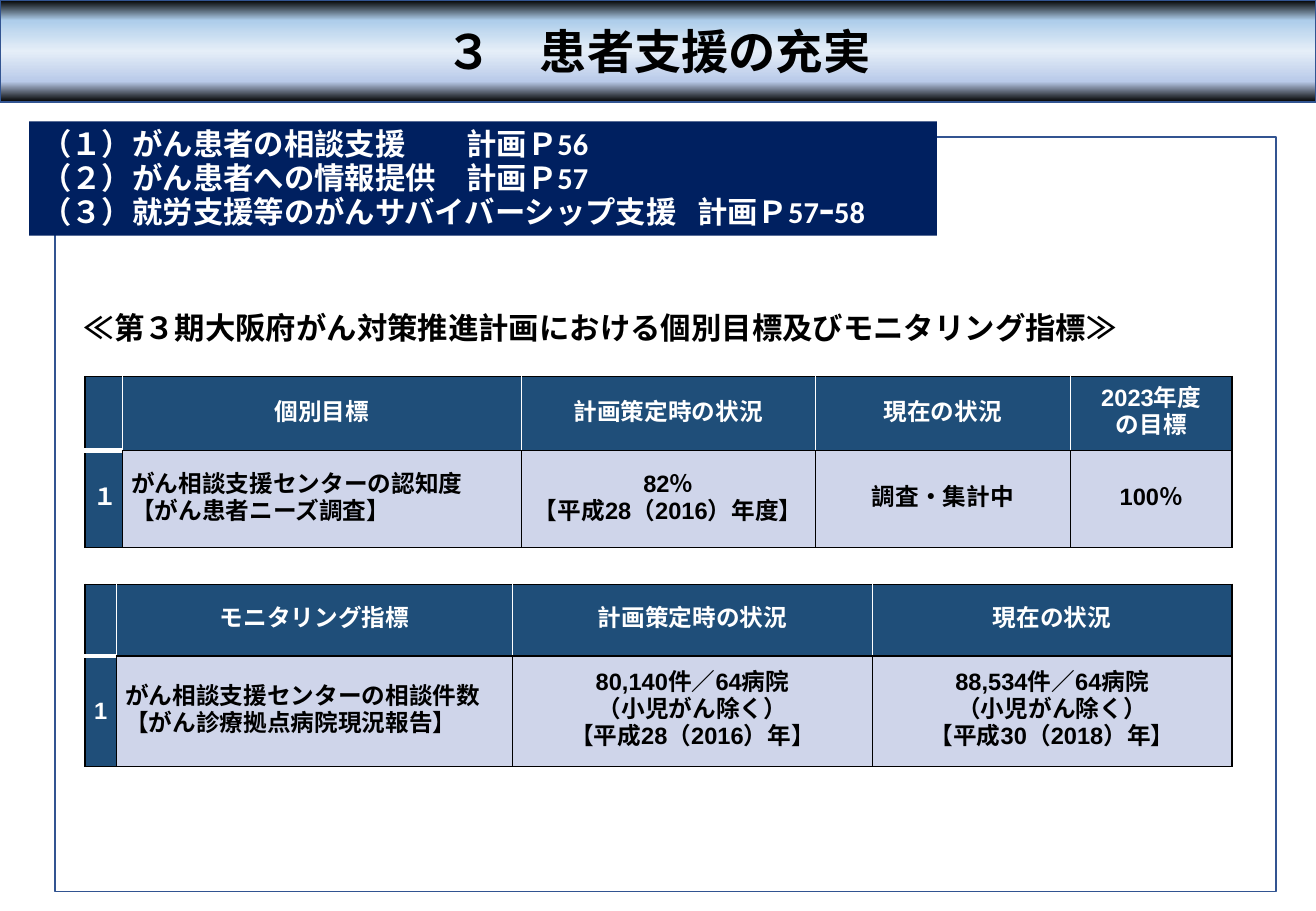
"""Build the patient support slide with its two indicator tables."""
from dataclasses import dataclass
from typing import Optional

from lxml.etree import SubElement
from pptx import Presentation
from pptx.dml.color import RGBColor
from pptx.enum.shapes import MSO_SHAPE as Shape
from pptx.enum.text import MSO_ANCHOR as Anchor, MSO_AUTO_SIZE as AutoSize, PP_ALIGN as Align
from pptx.oxml.ns import qn
from pptx.util import Inches, Pt

WIDTH, HEIGHT = Inches(10.83), Inches(7.5)
BLACK = RGBColor(0x00, 0x00, 0x00)
WHITE = RGBColor(0xFF, 0xFF, 0xFF)
OUTLINE = RGBColor(0x32, 0x54, 0x91)
NAVY = RGBColor(0x00, 0x20, 0x60)
HEADER = RGBColor(0x1F, 0x4E, 0x79)
BODY = RGBColor(0xCF, 0xD5, 0xEA)
TITLE_STOPS = {0: BLACK, 20: RGBColor(0xAD, 0xCD, 0xEA), 50: RGBColor(0xE5, 0xEE, 0xF8),
               80: RGBColor(0xB9, 0xCA, 0xE9), 100: BLACK}
JAPANESE = "Noto Sans CJK JP"
BANNER_TABS = (32.3, 49.84)
TABLE_LEFT = 6.46


@dataclass(frozen=True)
class Area:
    """A rectangle in percent of the slide's width and height."""
    left: float
    top: float
    width: float
    height: float

    def lengths(self) -> tuple:
        """Return the rectangle as slide lengths."""
        return across(self.left), down(self.top), across(self.width), down(self.height)


@dataclass(frozen=True)
class Style:
    """The format of a block of text."""
    size: float
    font: str
    color: RGBColor
    align: Align = Align.LEFT
    spacing: Optional[float] = None
    tabs: tuple = ()


@dataclass(frozen=True)
class Grid:
    """A table with its column and row shares and cell texts."""
    top: float
    columns: tuple
    rows: tuple
    texts: tuple


GRIDS = (
    Grid(41.33, (2.86, 30.29, 22.35, 19.39, 12.28), (8.13, 10.67), (
        ("", "個別目標", "計画策定時の状況", "現在の状況", "2023年度\nの目標"),
        ("１", "がん相談支援センターの認知度\n【がん患者ニーズ調査】",
         "82％\n【平成28（2016）年度】", "調査・集計中", "100％"))),
    Grid(64.13, (2.4, 30.1, 27.33, 27.33), (7.87, 12.13), (
        ("", "モニタリング指標", "計画策定時の状況", "現在の状況"),
        ("1", "がん相談支援センターの相談件数\n【がん診療拠点病院現況報告】",
         "80,140件／64病院\n（小児がん除く）\n【平成28（2016）年】",
         "88,534件／64病院\n（小児がん除く）\n【平成30（2018）年】"))),
)
BANNER_TEXT = ("（１）がん患者の相談支援\t計画Ｐ56\n"
               "（２）がん患者への情報提供\t計画Ｐ57\n"
               "（３）就労支援等のがんサバイバーシップ支援\t計画Ｐ57ｰ58")
HEADING_TEXT = "≪第３期大阪府がん対策推進計画における個別目標及びモニタリング指標≫"


def across(share: float) -> int:
    """Turn a percentage of the slide width into a length."""
    return int(WIDTH * share / 100)


def down(share: float) -> int:
    """Turn a percentage of the slide height into a length."""
    return int(HEIGHT * share / 100)


def apply(target, values: dict) -> None:
    """Set every named attribute on the target."""
    for name, value in values.items():
        setattr(target, name, value)


def write(frame, text: str, style: Style) -> None:
    """Write one paragraph per line of text."""
    for index, line in enumerate(text.split("\n")):
        para = frame.add_paragraph() if index else frame.paragraphs[0]
        para.alignment = style.align
        if style.spacing:
            para.line_spacing = Pt(style.spacing)
        if style.tabs:
            stops = SubElement(para._p.get_or_add_pPr(), qn("a:tabLst"))
            for share in style.tabs:
                SubElement(stops, qn("a:tab"), pos=str(across(share)), algn="l")
        span = para.add_run()
        span.text = line
        apply(span.font, {"size": Pt(style.size), "name": style.font, "bold": True})
        span.font.color.rgb = style.color
        SubElement(span.font._element, qn("a:ea"), typeface=JAPANESE)


def add_box(page, area: Area, fill: Optional[RGBColor], line: Optional[RGBColor]):
    """Add a rectangle with an optional fill and outline."""
    box = page.shapes.add_shape(Shape.RECTANGLE, *area.lengths())
    box.shadow.inherit = False
    if fill is not None:
        box.fill.solid()
        box.fill.fore_color.rgb = fill
    if line is None:
        box.line.fill.background()
    else:
        box.line.color.rgb = line
        box.line.width = Pt(1)
    box.text_frame.vertical_anchor = Anchor.MIDDLE
    return box


def fill_gradient(box, stops: dict) -> None:
    """Fill the box from top to bottom through the given stops."""
    box.fill.gradient()
    box.fill.gradient_angle = 270
    stop_list = box._element.spPr.find(qn("a:gradFill")).find(qn("a:gsLst"))
    for stop in list(stop_list):
        stop_list.remove(stop)
    for share, color in stops.items():
        stop = SubElement(stop_list, qn("a:gs"), pos=str(share * 1000))
        SubElement(stop, qn("a:srgbClr"), val=str(color))


def add_borders(cell, borders: dict) -> None:
    """Draw the cell's edges from a mapping of side to colour and width."""
    properties = cell._tc.get_or_add_tcPr()
    for index, (side, (color, width)) in enumerate(borders.items()):
        edge = SubElement(properties, qn(f"a:ln{side}"), w=str(Pt(width)))
        SubElement(SubElement(edge, qn("a:solidFill")), qn("a:srgbClr"), val=str(color))
        properties.insert(index, edge)


def add_grid(page, grid: Grid) -> None:
    """Add a table with a dark header row and a dark first column."""
    area = Area(TABLE_LEFT, grid.top, sum(grid.columns), sum(grid.rows))
    table = page.shapes.add_table(len(grid.rows), len(grid.columns), *area.lengths()).table
    apply(table, {"first_row": False, "horz_banding": False})
    for column, share in zip(table.columns, grid.columns):
        column.width = across(share)
    for row, share in zip(table.rows, grid.rows):
        row.height = down(share)
    thin, light, thick = (BLACK, 1), (WHITE, 1), (WHITE, 3)
    last = len(grid.columns) - 1
    for y, texts in enumerate(grid.texts):
        for x, text in enumerate(texts):
            cell = table.cell(y, x)
            header, first = y == 0, x == 0
            dark = header or first
            apply(cell, {"vertical_anchor": Anchor.MIDDLE, "margin_left": Inches(0.07),
                         "margin_right": Inches(0.07), "margin_top": 0, "margin_bottom": 0})
            cell.fill.solid()
            cell.fill.fore_color.rgb = HEADER if dark else BODY
            add_borders(cell, {
                "L": light if header and not first else thin,
                "R": light if header and x < last else thin,
                "T": thick if first and not header else thin,
                "B": thick if first and header else thin})
            if text:
                align = Align.LEFT if x == 1 and not header else Align.CENTER
                write(cell.text_frame, text,
                      Style(14, "Arial", WHITE if dark else BLACK, align, 16))


def main() -> None:
    """Build and save the deck."""
    deck = Presentation()
    apply(deck, {"slide_width": WIDTH, "slide_height": HEIGHT})
    page = deck.slides.add_slide(deck.slide_layouts[6])
    add_box(page, Area(4.16, 15.07, 92.8, 82.8), WHITE, OUTLINE)
    for grid in GRIDS:
        add_grid(page, grid)

    title = add_box(page, Area(0, 0, 100, 11.2), None, OUTLINE)
    fill_gradient(title, TITLE_STOPS)
    write(title.text_frame, "３　患者支援の充実", Style(28, JAPANESE, BLACK, Align.CENTER))

    banner = add_box(page, Area(2.22, 13.33, 68.98, 12.53), NAVY, None)
    write(banner.text_frame, BANNER_TEXT,
          Style(18, "Calibri", WHITE, spacing=20, tabs=BANNER_TABS))

    heading = page.shapes.add_textbox(*Area(5.45, 33.33, 82.09, 5.33).lengths())
    write(heading.text_frame, HEADING_TEXT, Style(18, "Calibri", BLACK))
    for box in (banner, heading):
        apply(box.text_frame, {"word_wrap": True, "auto_size": AutoSize.SHAPE_TO_FIT_TEXT})
    deck.save("out.pptx")


if __name__ == "__main__":
    main()
